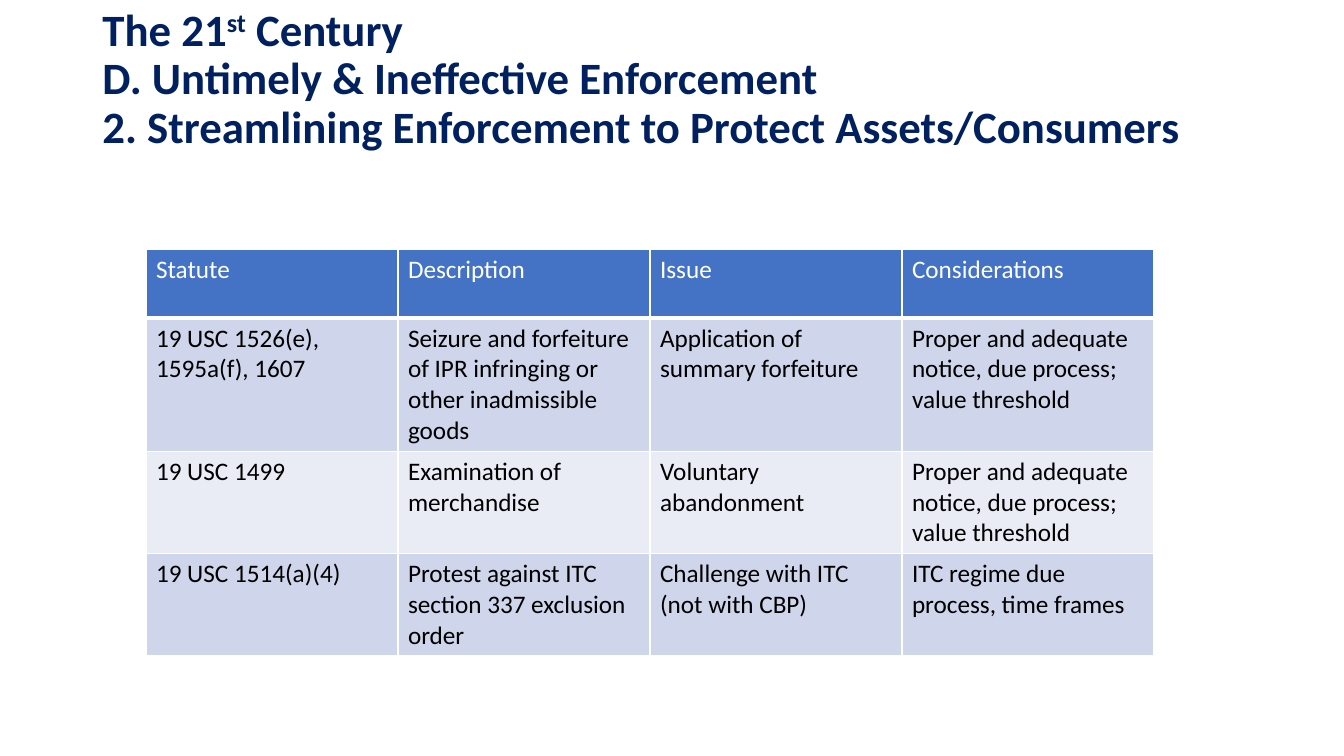
from dataclasses import dataclass

from pptx import Presentation
from pptx.dml.color import RGBColor
from pptx.enum.text import MSO_ANCHOR, MSO_AUTO_SIZE, PP_ALIGN
from pptx.oxml.ns import qn
from pptx.util import Emu, Pt
from lxml import etree

LEFT = PP_ALIGN.LEFT
MIDDLE, TOP = MSO_ANCHOR.MIDDLE, MSO_ANCHOR.TOP
NO_AUTOFIT = MSO_AUTO_SIZE.NONE
TITLE_ONLY = 5
PX = 9525  # EMU in one px, 96 px to the inch

COLORS = {
    "navy": "002060",
    "header": "4472C4",
    "band_dark": "CFD5EA",
    "band_light": "E9EBF5",
    "white": "FFFFFF",
    "black": "000000",
}
TITLE_FONT = {"name": "Calibri", "size": Pt(32), "bold": True}
CELL_FONT = {"name": "Calibri", "size": Pt(18), "bold": False}

TITLE_LINES = [
    [("The 21", False), ("st", True), (" Century", False)],
    [("D. Untimely & Ineffective Enforcement", False)],
    [("2. Streamlining Enforcement to Protect Assets/Consumers", False)],
]


@dataclass
class Row:
    height: int
    fill: str
    color: str
    bottom: int
    texts: tuple[str, ...]


NOTICE = "Proper and adequate notice, due process; value threshold"
ROWS = [
    Row(65, "header", "white", 3,
        ("Statute", "Description", "Issue", "Considerations")),
    Row(66, "band_dark", "black", 1,
        ("19 USC 1526(e), 1595a(f), 1607",
         "Seizure and forfeiture of IPR infringing or other inadmissible goods",
         "Application of summary forfeiture", NOTICE)),
    Row(78, "band_light", "black", 1,
        ("19 USC 1499", "Examination of merchandise",
         "Voluntary abandonment", NOTICE)),
    Row(66, "band_dark", "black", 1,
        ("19 USC 1514(a)(4)", "Protest against ITC section 337 exclusion order",
         "Challenge with ITC (not with CBP)",
         "ITC regime due process, time frames")),
]
COL_WIDTH = 240


def px(n: int) -> Emu:
    return Emu(n * PX)


def rgb(name: str) -> RGBColor:
    return RGBColor.from_string(COLORS[name])


def set_font(font, values: dict, color: str) -> None:
    for name, value in values.items():
        setattr(font, name, value)
    font.color.rgb = rgb(color)


def set_borders(cell, bottom: int) -> None:
    tcPr = cell._tc.get_or_add_tcPr()
    widths = {"lnL": 1, "lnR": 1, "lnT": 1, "lnB": bottom}
    for i, (side, width) in enumerate(widths.items()):
        ln = etree.Element(qn(f"a:{side}"), w=str(Pt(width)))
        fill = etree.SubElement(ln, qn("a:solidFill"))
        etree.SubElement(fill, qn("a:srgbClr"), val=COLORS["white"])
        tcPr.insert(i, ln)


def add_title(slide) -> None:
    sp = slide.shapes.title
    sp.left, sp.top, sp.width, sp.height = map(px, (88, 7, 1104, 139))
    tf = sp.text_frame
    tf.word_wrap, tf.auto_size, tf.vertical_anchor = True, NO_AUTOFIT, MIDDLE
    p = tf.paragraphs[0]
    p.alignment, p.line_spacing = LEFT, 0.9
    for i, line in enumerate(TITLE_LINES):
        if i:
            p.add_line_break()
        for text, raised in line:
            r = p.add_run()
            r.text = text
            set_font(r.font, TITLE_FONT, "navy")
            if raised:
                r._r.get_or_add_rPr().set("baseline", "30000")


def add_statutes(slide) -> None:
    cols = len(ROWS[0].texts)
    height = sum(row.height for row in ROWS)
    table = slide.shapes.add_table(
        len(ROWS), cols, px(139), px(238), px(COL_WIDTH * cols), px(height)).table
    for i, row in enumerate(ROWS):
        table.rows[i].height = px(row.height)
        for j, text in enumerate(row.texts):
            cell = table.cell(i, j)
            cell.vertical_anchor = TOP
            cell.fill.solid()
            cell.fill.fore_color.rgb = rgb(row.fill)
            set_borders(cell, row.bottom)
            r = cell.text_frame.paragraphs[0].add_run()
            r.text = text
            set_font(r.font, CELL_FONT, row.color)


def main() -> None:
    prs = Presentation()
    prs.slide_width, prs.slide_height = px(1280), px(720)
    s = prs.slides.add_slide(prs.slide_layouts[TITLE_ONLY])
    # Heading
    add_title(s)
    # Table of statutes
    add_statutes(s)
    prs.save("out.pptx")


if __name__ == "__main__":
    main()
